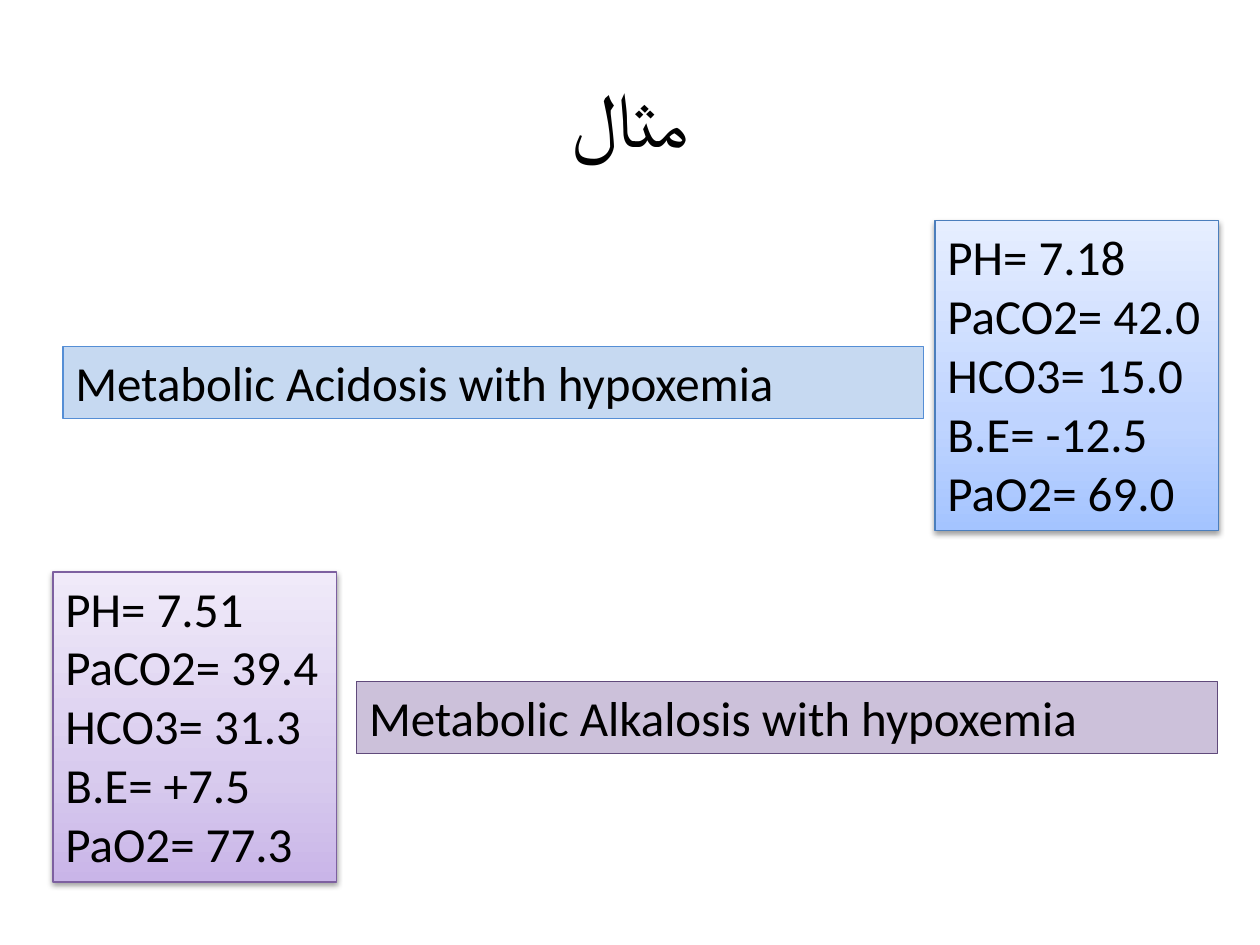
from copy import deepcopy

from lxml.etree import SubElement
from pptx import Presentation
from pptx.dml.color import RGBColor
from pptx.enum.shapes import MSO_SHAPE as Shape
from pptx.enum.text import MSO_ANCHOR as Anchor, MSO_AUTO_SIZE as AutoSize, PP_ALIGN as Align
from pptx.oxml.ns import qn
from pptx.util import Cm, Pt

FONT = "Calibri"
BLACK = RGBColor(0x00, 0x00, 0x00)
BLUE_LINE = RGBColor(0x4B, 0x7E, 0xBC)
BLUE_LABEL = RGBColor(0xC6, 0xD9, 0xF1)
BLUE_LABEL_LINE = RGBColor(0x55, 0x8E, 0xD5)
PURPLE_LINE = RGBColor(0x7D, 0x60, 0xA0)
PURPLE_LABEL = RGBColor(0xCC, 0xC1, 0xDA)
PURPLE_LABEL_LINE = RGBColor(0x60, 0x4A, 0x7B)

# Gradient colours from bottom to top
BLUE_GRADIENT = (RGBColor(0xA4, 0xC4, 0xFF), RGBColor(0xBF, 0xD4, 0xFF), RGBColor(0xE6, 0xEE, 0xFF))
PURPLE_GRADIENT = (RGBColor(0xC9, 0xB5, 0xE8), RGBColor(0xD8, 0xCB, 0xEE), RGBColor(0xF0, 0xEA, 0xF9))
GRADIENT_POSITIONS = (0, 0.35, 1)

RESULTS_SIZE = (Cm(5.72), Cm(6.25))
LABEL_SIZE = (Cm(17.35), Cm(1.45))


def add_run(paragraph, text, size):
    run = paragraph.add_run()
    run.text = text
    run.font.name = FONT
    run.font.size = Pt(size)
    run.font.color.rgb = BLACK


def fill_title(slide, text):
    title = slide.shapes.title
    title.left, title.top, title.width, title.height = Cm(1.27), Cm(0.76), Cm(22.86), Cm(3.18)
    title.text_frame.vertical_anchor = Anchor.MIDDLE
    paragraph = title.text_frame.paragraphs[0]
    paragraph.alignment = Align.CENTER
    add_run(paragraph, text, 44)


def add_box(slide, left, top, size, line_color, lines):
    shape = slide.shapes.add_shape(Shape.RECTANGLE, left, top, *size)
    shape.shadow.inherit = False
    shape.line.color.rgb = line_color
    shape.line.width = Pt(0.75)
    frame = shape.text_frame
    frame.word_wrap = True
    frame.auto_size = AutoSize.SHAPE_TO_FIT_TEXT
    frame.vertical_anchor = Anchor.TOP
    for index, line in enumerate(lines):
        paragraph = frame.add_paragraph() if index else frame.paragraphs[0]
        paragraph.alignment = Align.LEFT
        add_run(paragraph, line, 28)
    return shape


def apply_gradient(shape, colors):
    shape.fill.gradient()
    shape.fill.gradient_angle = 90
    # The default gradient has two stops; add a third
    stop_list = shape._element.spPr.find(".//" + qn("a:gsLst"))
    stop_list.append(deepcopy(stop_list[-1]))
    for stop, position, color in zip(shape.fill.gradient_stops, GRADIENT_POSITIONS, colors):
        stop.position = position
        stop.color.rgb = color


def apply_shadow(shape):
    effects = shape._element.spPr.find(qn("a:effectLst"))
    shadow = SubElement(effects, qn("a:outerShdw"), blurRad="40000", dist="20000",
                        dir="5400000", rotWithShape="0")
    color = SubElement(shadow, qn("a:srgbClr"), val="000000")
    SubElement(color, qn("a:alpha"), val="38000")


def add_results(slide, left, top, gradient, line_color, lines):
    shape = add_box(slide, left, top, RESULTS_SIZE, line_color, lines)
    apply_gradient(shape, gradient)
    apply_shadow(shape)


def add_label(slide, left, top, fill_color, line_color, text):
    shape = add_box(slide, left, top, LABEL_SIZE, line_color, [text])
    shape.fill.solid()
    shape.fill.fore_color.rgb = fill_color


def main():
    presentation = Presentation()
    presentation.slide_width, presentation.slide_height = Cm(25.4), Cm(19.05)
    slide = presentation.slides.add_slide(presentation.slide_layouts[5])
    fill_title(slide, "مثال")

    # Alkalosis example
    add_results(slide, Cm(1.07), Cm(11.53), PURPLE_GRADIENT, PURPLE_LINE,
                ["PH= 7.51", "PaCO2= 39.4", "HCO3= 31.3", "B.E= +7.5", "PaO2= 77.3"])
    add_label(slide, Cm(7.19), Cm(13.74), PURPLE_LABEL, PURPLE_LABEL_LINE,
              "Metabolic Alkalosis with hypoxemia")

    # Acidosis example
    add_results(slide, Cm(18.85), Cm(4.45), BLUE_GRADIENT, BLUE_LINE,
                ["PH= 7.18", "PaCO2= 42.0", "HCO3= 15.0", "B.E= -12.5", "PaO2= 69.0"])
    add_label(slide, Cm(1.27), Cm(6.99), BLUE_LABEL, BLUE_LABEL_LINE,
              "Metabolic Acidosis with hypoxemia")

    presentation.save("out.pptx")


if __name__ == "__main__":
    main()
